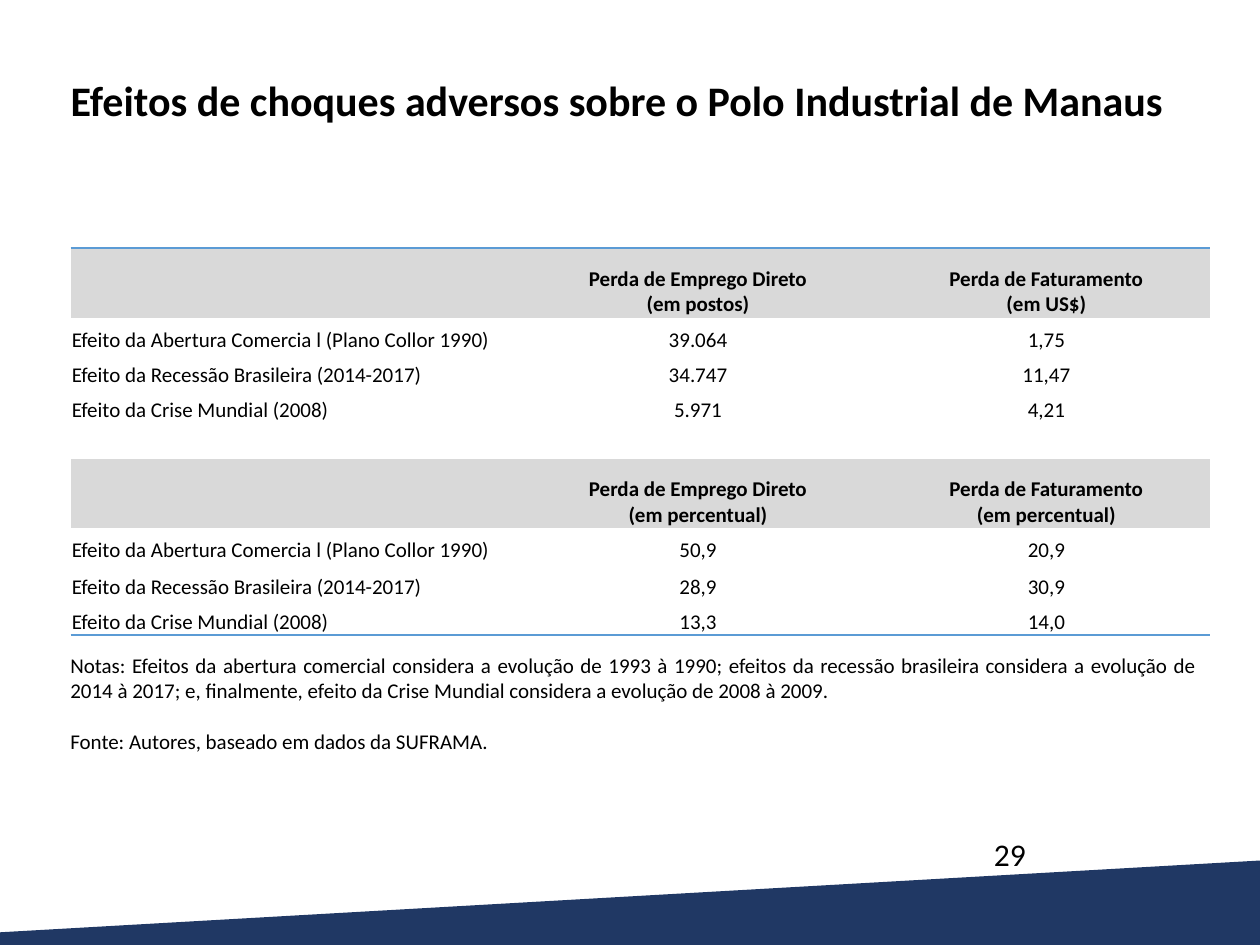
from lxml.etree import SubElement
from pptx import Presentation
from pptx.dml.color import RGBColor
from pptx.enum.text import MSO_ANCHOR, PP_ALIGN
from pptx.oxml.ns import qn
from pptx.util import Inches, Pt

COLORS = {"text": "000000", "band": "203864", "header": "D9D9D9", "rule": "5B9BD5"}
NO_STYLE = "{2D5ABB26-0587-4C30-8999-92F81FD0307C}"
COLUMN_WIDTHS = (3.51, 2.94, 2.59)
ROW_HEIGHTS = (0.55, 0.28, 0.28, 0.28, 0.28, 0.55, 0.28, 0.29, 0.28)
HEADER_ROWS = (0, 5)
EFFECTS = (
    "Efeito da Abertura Comercia l (Plano Collor 1990)",
    "Efeito da Recessão Brasileira (2014-2017)",
    "Efeito da Crise Mundial (2008)",
)
LOSSES = ("Perda de Emprego Direto", "Perda de Faturamento")
SECTIONS = (
    (("(em postos)", "(em US$)"),
     (("39.064", "1,75"), ("34.747", "11,47"), ("5.971", "4,21"))),
    (("(em percentual)", "(em percentual)"),
     (("50,9", "20,9"), ("28,9", "30,9"), ("13,3", "14,0"))),
)
NOTES = (
    "Notas: Efeitos da abertura comercial considera a evolução de 1993 à 1990; "
    "efeitos da recessão brasileira considera a evolução de 2014 à 2017; "
    "e, finalmente, efeito da Crise Mundial considera a evolução de 2008 à 2009."
)
SOURCE = "Fonte: Autores, baseado em dados da SUFRAMA."


def apply(target, values):
    for name, value in values.items():
        setattr(target, name, value)


def color(name):
    return RGBColor.from_string(COLORS[name])


def write(frame, text, size, bold=False, **paragraph_format):
    frame.word_wrap = True
    frame.text = text
    for paragraph in frame.paragraphs:
        apply(paragraph, paragraph_format)
        apply(paragraph.font, {"name": "Calibri", "size": Pt(size), "bold": bold})
        paragraph.font.color.rgb = color("text")


def place(shape, left, top, width, height):
    apply(shape, {"left": Inches(left), "top": Inches(top),
                  "width": Inches(width), "height": Inches(height)})


def add_band(slide):
    corners = [(Inches(x), Inches(y)) for x, y in ((0, 7.4), (10, 6.83), (10, 7.5), (0, 7.5))]
    builder = slide.shapes.build_freeform(*corners[0])
    builder.add_line_segments(corners[1:], close=True)
    band = builder.convert_to_shape()
    band.shadow.inherit = False
    band.fill.solid()
    band.fill.fore_color.rgb = color("band")
    band.line.fill.background()


def set_title(slide, text):
    title = slide.shapes.title
    place(title, 0.46, 0.59, 9.14, 0.71)
    write(title.text_frame, text, 24, True, alignment=PP_ALIGN.LEFT, line_spacing=0.9)
    title.text_frame.vertical_anchor = MSO_ANCHOR.TOP


def add_text(slide, box, text, size, alignment):
    frame = slide.shapes.add_textbox(*map(Inches, box)).text_frame
    write(frame, text, size, alignment=alignment)
    return frame


def add_rule(cell, side):
    properties = cell._tc.get_or_add_tcPr()
    rule = SubElement(properties, qn(f"a:{side}"), w=str(Pt(1)))
    fill = SubElement(rule, qn("a:solidFill"))
    SubElement(fill, qn("a:srgbClr"), val=COLORS["rule"])
    properties.insert(0, rule)


def table_rows():
    rows = []
    for units, values in SECTIONS:
        if rows:
            rows.append(("", "", ""))
        rows.append(("", *map("\n".join, zip(LOSSES, units))))
        rows.extend((effect, *pair) for effect, pair in zip(EFFECTS, values))
    return rows


def add_losses_table(slide):
    rows = table_rows()
    frame = slide.shapes.add_table(
        len(rows), len(COLUMN_WIDTHS), Inches(0.56), Inches(1.97),
        Inches(sum(COLUMN_WIDTHS)), Inches(sum(ROW_HEIGHTS)))
    for style in frame.element.iter(qn("a:tableStyleId")):
        style.text = NO_STYLE
    table = frame.table
    apply(table, {"first_row": False, "horz_banding": False})
    for column, width in zip(table.columns, COLUMN_WIDTHS):
        column.width = Inches(width)
    for row, height in zip(table.rows, ROW_HEIGHTS):
        row.height = Inches(height)
    cell_format = {
        "margin_left": Inches(0.01), "margin_right": Inches(0.01),
        "margin_top": Inches(0.01), "margin_bottom": 0,
        "vertical_anchor": MSO_ANCHOR.BOTTOM,
    }
    for r, texts in enumerate(rows):
        is_header = r in HEADER_ROWS
        for c, text in enumerate(texts):
            cell = table.cell(r, c)
            apply(cell, cell_format)
            write(cell.text_frame, text, 12, is_header,
                  alignment=PP_ALIGN.CENTER if c else PP_ALIGN.LEFT)
            if is_header:
                cell.fill.solid()
                cell.fill.fore_color.rgb = color("header")
            else:
                cell.fill.background()
            if r == 0:
                add_rule(cell, "lnT")
            if r == len(rows) - 1:
                add_rule(cell, "lnB")


def add_notes(slide):
    frame = add_text(slide, (0.46, 5.13, 9.14, 0.91), f"{NOTES}\n{SOURCE}", 12, PP_ALIGN.JUSTIFY)
    source = frame.paragraphs[1]
    apply(source, {"alignment": PP_ALIGN.LEFT, "space_before": Pt(14.6)})


def main():
    presentation = Presentation()
    apply(presentation, {"slide_width": Inches(10), "slide_height": Inches(7.5)})
    slide = presentation.slides.add_slide(presentation.slide_layouts[5])
    add_band(slide)
    set_title(slide, "Efeitos de choques adversos sobre o Polo Industrial de Manaus")
    add_text(slide, (7.79, 6.58, 1.64, 0.4), "29", 18, PP_ALIGN.LEFT)
    add_losses_table(slide)
    add_notes(slide)
    presentation.save("out.pptx")


if __name__ == "__main__":
    main()
